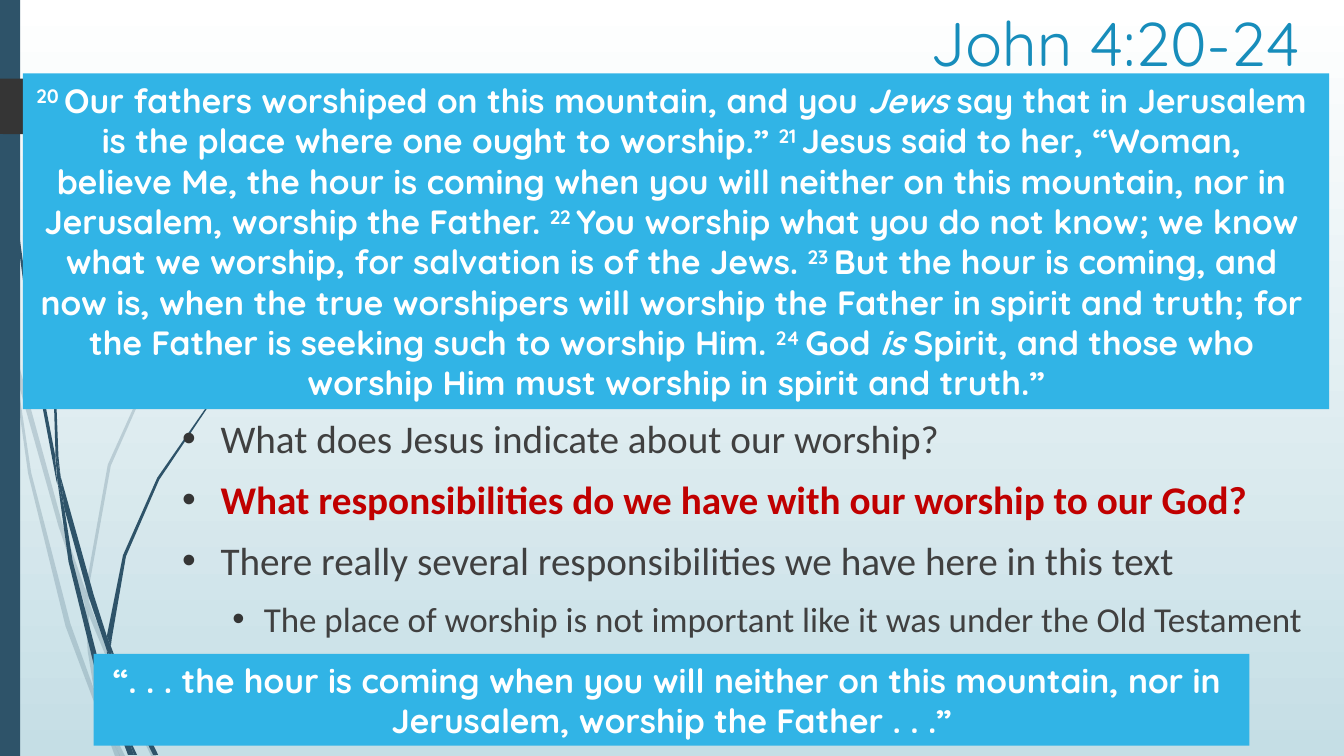
from dataclasses import dataclass
from typing import Optional

from lxml.etree import SubElement
from pptx import Presentation
from pptx.dml.color import RGBColor
from pptx.enum.shapes import MSO_SHAPE as Shape
from pptx.enum.text import MSO_ANCHOR as Anchor, MSO_AUTO_SIZE as AutoSize, PP_ALIGN as Align
from pptx.oxml.ns import qn
from pptx.util import Cm, Pt


@dataclass(frozen=True)
class Theme:
    heading_font: str = "Quicksand"
    body_font: str = "Calibri"
    title_size: int = 44
    question_size: int = 28
    point_size: int = 25
    verse_size: int = 24
    gap: int = 10
    white: str = "FFFFFF"
    sky: str = "C5DEE5"
    navy: str = "2E5369"
    flag: str = "353535"
    title: str = "178DBB"
    panel: str = "31B4E6"
    text: str = "404040"
    accent: str = "C00000"


@dataclass(frozen=True)
class Box:
    left: float
    top: float
    width: float
    height: float

    def lengths(self) -> tuple:
        return Cm(self.left), Cm(self.top), Cm(self.width), Cm(self.height)


@dataclass(frozen=True)
class Span:
    text: str
    italic: bool = False
    raised: bool = False


@dataclass(frozen=True)
class Bullet:
    text: str
    color: str
    size: int
    indent: float = 0.97
    hanging: float = 0.97
    level: int = 0
    bold: bool = False


THEME = Theme()
SLIDE_WIDTH, SLIDE_HEIGHT = 33.87, 19.05
GRID = Cm(2.54) / 100  # one unit of the outlines below

# Outlines of the grass blades: pale ones behind, dark ones in front
PALE_BLADES = [
    [(11, 350), (9, 322), (0, 282), (0, 299), (10, 344)],
    [(58, 522), (84, 599), (85, 586), (62, 520), (14, 345), (17, 376)],
    [(92, 607), (88, 596), (88, 610), (123, 694), (150, 750), (155, 750), (127, 692)],
    [(119, 750), (124, 750), (105, 711)],
    [(93, 683), (70, 619), (31, 469), (17, 376), (11, 350), (28, 470), (65, 621),
     (92, 693), (101, 714), (99, 707)],
    [(84, 599), (87, 646), (93, 683), (96, 692), (105, 711), (103, 706), (91, 646),
     (88, 610), (88, 608)],
    [(88, 584), (110, 462), (160, 349), (229, 245), (268, 198), (290, 175), (312, 154),
     (312, 153), (289, 175), (268, 197), (228, 244), (158, 348), (107, 461), (85, 584),
     (85, 586), (88, 596)],
    [(101, 714), (114, 750), (119, 750)],
    [(88, 608), (88, 610), (88, 596), (85, 586), (84, 599)],
    [(96, 692), (93, 683), (99, 707), (101, 714), (119, 750), (105, 711)],
]
DARK_BLADES = [
    [(7, 110), (17, 233), (33, 355), (56, 477), (57, 481), (55, 457), (55, 453), (36, 355),
     (19, 232), (8, 109), (5, 48), (4, 0), (3, 0), (4, 48)],
    [(88, 592), (106, 645), (106, 633), (106, 631), (93, 590), (60, 472), (64, 505)],
    [(113, 649), (110, 641), (111, 656), (132, 708), (152, 749), (157, 749), (136, 706)],
    [(110, 691), (98, 657), (72, 556), (64, 505), (57, 477), (68, 557), (93, 659),
     (111, 708), (117, 722), (116, 717)],
    [(60, 472), (58, 453), (54, 349), (58, 245), (63, 193), (70, 141), (62, 193),
     (56, 245), (52, 349), (55, 449)],
    [(133, 749), (136, 749), (122, 719)],
    [(57, 477), (64, 505), (60, 472), (55, 449), (55, 453)],
    [(111, 633), (125, 552), (158, 476), (205, 406), (231, 374), (245, 359), (261, 344),
     (260, 344), (245, 358), (231, 373), (204, 405), (156, 474), (122, 551), (106, 631),
     (110, 641)],
    [(117, 722), (127, 749), (131, 749)],
    [(106, 645), (110, 691), (116, 706), (122, 719), (121, 716), (111, 656), (109, 651)],
    [(106, 645), (109, 651), (111, 656), (110, 641), (106, 631), (106, 633)],
    [(116, 706), (110, 691), (116, 717), (117, 722), (130, 749), (133, 749), (122, 719)],
]
FLAG = [(173, 108), (148, 133), (146, 134), (136, 134), (0, 133), (0, 78), (136, 78),
        (146, 78), (148, 79), (173, 104), (174, 106)]

VERSE_LINES = [
    [Span("20 ", raised=True), Span("Our fathers worshiped on this mountain, and you "),
     Span("Jews", italic=True), Span(" say that in Jerusalem ")],
    [Span("is the place where one ought to worship.” "), Span("21 ", raised=True),
     Span("Jesus said to her, “Woman, ")],
    [Span("believe Me, the hour is coming when you will neither on this mountain, nor in ")],
    [Span("Jerusalem, worship the Father. "), Span("22 ", raised=True),
     Span("You worship what you do not know; we know ")],
    [Span("what we worship, for salvation is of the Jews. "), Span("23 ", raised=True),
     Span("But the hour is coming, and ")],
    [Span("now is, when the true worshipers will worship the Father in spirit and truth; for ")],
    [Span("the Father is seeking such to worship Him. "), Span("24 ", raised=True),
     Span("God "), Span("is", italic=True), Span(" Spirit, and those who ")],
    [Span("worship Him must worship in spirit and truth.”")],
]
QUOTE_LINES = [
    [Span("“. . . the hour is coming when you will neither on this mountain, nor in ")],
    [Span("Jerusalem, worship the Father . . .”")],
]
BULLETS = [
    Bullet("What does Jesus indicate about our worship?", THEME.text, THEME.question_size),
    Bullet("What responsibilities do we have with our worship to our God?",
           THEME.accent, THEME.question_size, bold=True),
    Bullet("There really several responsibilities we have here in this text",
           THEME.text, THEME.question_size),
    Bullet("The place of worship is not important like it was under the Old Testament",
           THEME.text, THEME.point_size, indent=2.06, hanging=0.79, level=1),
]


def paint(shape, color: str, opacity: Optional[int] = None) -> None:
    shape.shadow.inherit = False
    shape.line.fill.background()
    shape.fill.solid()
    shape.fill.fore_color.rgb = RGBColor.from_string(color)
    if opacity is not None:
        color_element = shape._element.spPr.find(qn("a:solidFill"))[0]
        SubElement(color_element, qn("a:alpha"), val=str(opacity * 1000))


def draw_outline(slide, points: list, color: str, opacity: Optional[int] = None) -> None:
    builder = slide.shapes.build_freeform(*points[0], scale=GRID)
    builder.add_line_segments(points[1:], close=True)
    paint(builder.convert_to_shape(), color, opacity)


def draw_rectangle(slide, box: Box, color: str):
    shape = slide.shapes.add_shape(Shape.RECTANGLE, *box.lengths())
    paint(shape, color)
    return shape


def style_font(font, name: str, size: int, color: str, bold: bool = False) -> None:
    font.name, font.size, font.bold = name, Pt(size), bold
    font.color.rgb = RGBColor.from_string(color)


def draw_panel(slide, box: Box, lines: list, wrap: bool) -> None:
    frame = draw_rectangle(slide, box, THEME.panel).text_frame
    frame.word_wrap, frame.auto_size = wrap, AutoSize.NONE
    frame.vertical_anchor = Anchor.MIDDLE
    for index, spans in enumerate(lines):
        paragraph = frame.add_paragraph() if index else frame.paragraphs[0]
        paragraph.alignment = Align.CENTER
        for span in spans:
            run = paragraph.add_run()
            run.text = span.text
            style_font(run.font, THEME.heading_font, THEME.verse_size, THEME.white, bold=True)
            run.font.italic = span.italic
            if span.raised:
                run._r.get_or_add_rPr().set("baseline", "30000")


def draw_title(slide, box: Box, text: str) -> None:
    frame = slide.shapes.add_textbox(*box.lengths()).text_frame
    frame.word_wrap = True
    frame.text = text
    style_font(frame.paragraphs[0].runs[0].font, THEME.heading_font, THEME.title_size, THEME.title)


def draw_bullets(slide, box: Box, bullets: list) -> None:
    frame = slide.shapes.add_textbox(*box.lengths()).text_frame
    frame.word_wrap = True
    for index, bullet in enumerate(bullets):
        paragraph = frame.add_paragraph() if index else frame.paragraphs[0]
        paragraph.text = bullet.text
        paragraph.level = bullet.level
        paragraph.space_before = Pt(THEME.gap if index else 0)
        properties = paragraph._p.get_or_add_pPr()
        properties.set("marL", str(Cm(bullet.indent)))
        properties.set("indent", str(-Cm(bullet.hanging)))
        bullet_color = SubElement(properties, qn("a:buClr"))
        SubElement(bullet_color, qn("a:srgbClr"), val=THEME.flag)
        SubElement(properties, qn("a:buFont"), typeface="Arial")
        SubElement(properties, qn("a:buChar"), char="•")
        style_font(paragraph.runs[0].font, THEME.body_font, bullet.size, bullet.color, bullet.bold)


def main() -> None:
    presentation = Presentation()
    presentation.slide_width, presentation.slide_height = Cm(SLIDE_WIDTH), Cm(SLIDE_HEIGHT)
    slide = presentation.slides.add_slide(presentation.slide_layouts[6])

    # Background fading downwards
    background = slide.background.fill
    background.gradient()
    background.gradient_angle = 270
    for stop, color in zip(background.gradient_stops, (THEME.white, THEME.sky)):
        stop.color.rgb = RGBColor.from_string(color)

    # Grass, side bar and flag
    for blades, opacity in ((PALE_BLADES, 20), (DARK_BLADES, None)):
        for blade in blades:
            draw_outline(slide, blade, THEME.navy, opacity)
    draw_rectangle(slide, Box(0, 0, 0.51, SLIDE_HEIGHT), THEME.navy)
    draw_outline(slide, FLAG, THEME.flag)

    # Title, questions, passage and quotation
    draw_title(slide, Box(23.19, 0, 10.67, 2.18), "John 4:20-24")
    draw_bullets(slide, Box(4.34, 10.31, 29.51, 8.74), BULLETS)
    draw_panel(slide, Box(0.58, 1.85, 32.92, 8.46), VERSE_LINES, wrap=False)
    draw_panel(slide, Box(2.36, 16.48, 29.13, 2.31), QUOTE_LINES, wrap=True)
    presentation.save("out.pptx")


if __name__ == "__main__":
    main()
